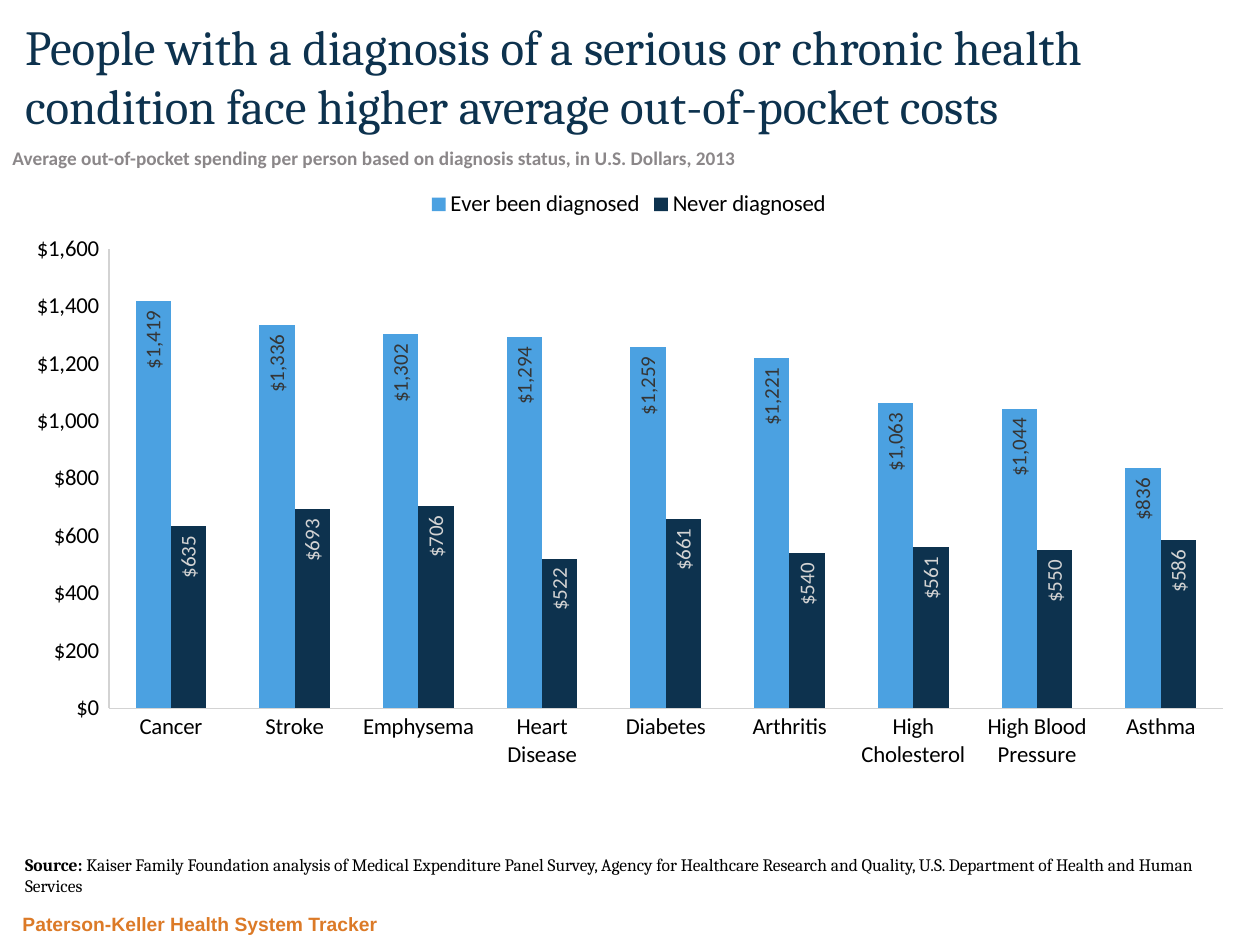
from lxml.etree import SubElement
from pptx import Presentation
from pptx.chart.data import CategoryChartData
from pptx.dml.color import RGBColor
from pptx.enum.chart import XL_CHART_TYPE, XL_LABEL_POSITION, XL_LEGEND_POSITION, XL_TICK_MARK
from pptx.enum.text import MSO_ANCHOR
from pptx.oxml.ns import qn
from pptx.util import Emu, Pt

PX = 9144
COLORS = {
    "navy": "0D324E", "blue": "4BA1E1", "orange": "DC7A27", "gray": "8B8789",
    "light": "D3D3D3", "dark": "353535", "black": "000000",
}
DOLLARS = r"[$$-409]#,##0_ ;\-[$$-409]#,##0\ "
CONDITIONS = [
    "Cancer", "Stroke", "Emphysema", "Heart Disease", "Diabetes", "Arthritis",
    "High Cholesterol", "High Blood Pressure", "Asthma",
]
SERIES = [
    ("Ever been diagnosed", [1419, 1336, 1302, 1294, 1259, 1221, 1063, 1044, 836], "blue", "dark"),
    ("Never diagnosed", [635, 693, 706, 522, 661, 540, 561, 550, 586], "navy", "light"),
]
PLOT_AREA = {"x": 0.08, "y": 0.12, "w": 0.9, "h": 0.76}


class SlideBuilder:
    def __init__(self, width, height):
        self.presentation = Presentation()
        self.presentation.slide_width = Emu(width * PX)
        self.presentation.slide_height = Emu(height * PX)
        self.slide = self.presentation.slides.add_slide(self.presentation.slide_layouts[6])

    def color(self, name):
        return RGBColor.from_string(COLORS[name])

    def box(self, *lengths):
        return [Emu(length * PX) for length in lengths]

    def style(self, font, name, size, color, bold=False):
        font.name, font.size, font.bold = name, Pt(size), bold
        font.color.rgb = self.color(color)

    def text(self, bounds, runs, name, size, color, anchor=MSO_ANCHOR.TOP, wrap=True):
        frame = self.slide.shapes.add_textbox(*self.box(*bounds)).text_frame
        frame.word_wrap = wrap
        frame.vertical_anchor = anchor
        for content, bold in runs:
            run = frame.paragraphs[0].add_run()
            run.text = content
            self.style(run.font, name, size, color, bold)

    def column_chart(self, bounds, categories, series_list):
        data = CategoryChartData(number_format=DOLLARS)
        data.categories = categories
        for name, values, _, _ in series_list:
            data.add_series(name, values)
        chart = self.slide.shapes.add_chart(
            XL_CHART_TYPE.COLUMN_CLUSTERED, *self.box(*bounds), data).chart
        self.style(chart.font, "Calibri", 13, "black")
        chart.has_title = False
        chart.has_legend = True
        chart.legend.position = XL_LEGEND_POSITION.TOP
        chart.legend.include_in_layout = False
        self.axes(chart)
        self.place_plot(chart)
        plot = chart.plots[0]
        plot.gap_width, plot.overlap, plot.vary_by_categories = 150, 0, False
        for series, (_, _, fill, label) in zip(plot.series, series_list):
            series.format.fill.solid()
            series.format.fill.fore_color.rgb = self.color(fill)
            self.labels(series.data_labels, label)

    def axes(self, chart):
        for axis in (chart.category_axis, chart.value_axis):
            axis.has_major_gridlines = False
            axis.major_tick_mark = axis.minor_tick_mark = XL_TICK_MARK.NONE
            axis.format.line.color.rgb = self.color("light")
            axis.format.line.width = Pt(0.75)
        scale = chart.value_axis
        scale.minimum_scale, scale.maximum_scale, scale.major_unit = 0, 1600, 200
        scale.tick_labels.number_format = DOLLARS
        scale.tick_labels.number_format_is_linked = False

    def place_plot(self, chart):
        plot_area = chart.plots[0]._element.getparent()
        layout = plot_area.find(qn("c:layout"))
        if layout is None:
            layout = SubElement(plot_area, qn("c:layout"))
            plot_area.insert(0, layout)
        manual = SubElement(layout, qn("c:manualLayout"))
        settings = {"layoutTarget": "inner", "xMode": "edge", "yMode": "edge", **PLOT_AREA}
        for tag, value in settings.items():
            SubElement(manual, qn(f"c:{tag}")).set("val", str(value))

    def labels(self, labels, color):
        labels.show_value = True
        labels.position = XL_LABEL_POSITION.INSIDE_END
        labels.number_format = DOLLARS
        labels.number_format_is_linked = False
        self.style(labels.font, "Calibri", 12, color)
        body = labels._element.find(qn("c:txPr")).find(qn("a:bodyPr"))
        body.set("rot", "-5400000")
        body.set("vert", "horz")


def main():
    builder = SlideBuilder(1000, 750)
    builder.text((8, 717, 798, 30), [("Paterson-Keller Health System Tracker", True)],
                 "Arial", 11, "orange", MSO_ANCHOR.BOTTOM)
    builder.text((10, 10, 982, 100),
                 [("People with a diagnosis of a serious or chronic health condition "
                   "face higher average out-of-pocket costs", False)],
                 "Cambria", 28, "navy", MSO_ANCHOR.MIDDLE)
    builder.column_chart((8, 140, 982, 480), CONDITIONS, SERIES)
    builder.text((10, 673, 982, 47),
                 [("Source: ", True),
                  ("Kaiser Family Foundation analysis of Medical Expenditure Panel Survey, "
                   "Agency for Healthcare Research and Quality, "
                   "U.S. Department of Health and Human Services", False)],
                 "Cambria", 10, "black")
    builder.text((0, 111, 605, 29),
                 [("Average out-of-pocket spending per person based on diagnosis status, "
                   "in U.S. Dollars, 2013", True)],
                 "Calibri", 11, "gray", wrap=False)
    builder.presentation.save("out.pptx")


if __name__ == "__main__":
    main()
